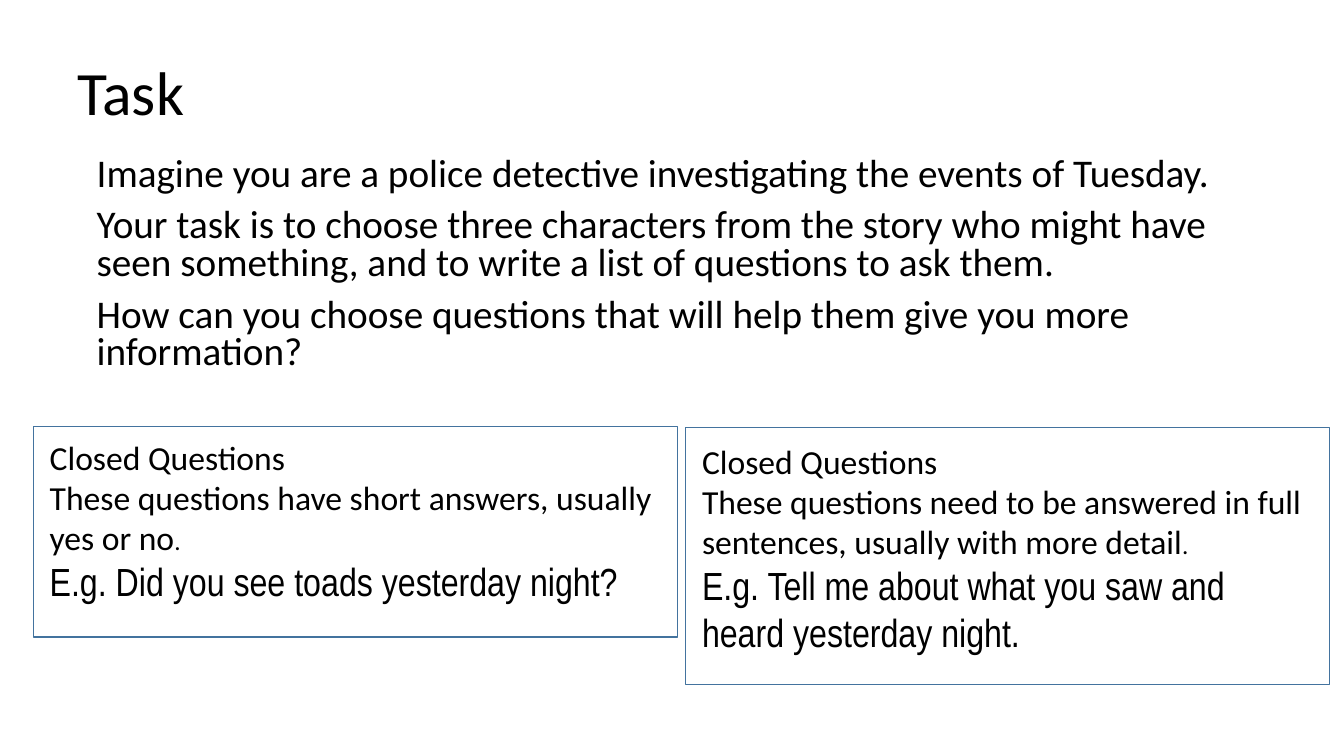
from dataclasses import dataclass

from pptx import Presentation
from pptx.dml.color import RGBColor
from pptx.enum.shapes import MSO_SHAPE as Preset
from pptx.enum.text import MSO_ANCHOR as Anchor, MSO_AUTO_SIZE as AutoSize, PP_ALIGN as Align
from pptx.util import Pt


@dataclass(frozen=True)
class Theme:
    """Colours, fonts and type sizes of the slide."""
    text: RGBColor = RGBColor(0, 0, 0)
    outline: RGBColor = RGBColor(0x43, 0x73, 0x9E)
    font: str = "Calibri"
    example_font: str = "Arial Narrow"
    title: int = 44
    body: int = 28
    card: int = 24
    full_stop: int = 18


THEME = Theme()

INSTRUCTIONS = [
    "Imagine you are a police detective investigating the events of Tuesday.",
    "Your task is to choose three characters from the story who might have "
    "seen something, and to write a list of questions to ask them.",
    "How can you choose questions that will help them give you more information?",
]

CARDS = [
    ((23.8, 304.6, 460, 150.5), 3.6, "Closed Questions",
     "These questions have short answers, usually yes or no",
     "E.g. Did you see toads yesterday night?"),
    ((489.8, 305.3, 460, 183.6), 5.8, "Closed Questions",
     "These questions need to be answered in full sentences, usually with more detail",
     "E.g. Tell me about what you saw and heard yesterday night."),
]


def style_runs(paragraph, size, font=THEME.font):
    """Give every run of a paragraph its font, size and colour."""
    for run in paragraph.runs:
        run.font.name = font
        run.font.size = Pt(size)
        run.font.color.rgb = THEME.text


def add_text_box(slide, box, text):
    """Add a wrapping text box and return its text frame."""
    text_frame = slide.shapes.add_textbox(*map(Pt, box)).text_frame
    text_frame.word_wrap = True
    text_frame.text = text
    return text_frame


def place_title(slide, box, text):
    """Move the title placeholder into its box and fill it."""
    title = slide.shapes.title
    title.left, title.top, title.width, title.height = map(Pt, box)
    text_frame = title.text_frame
    text_frame.text = text
    text_frame.vertical_anchor = Anchor.MIDDLE
    text_frame.auto_size = AutoSize.NONE
    paragraph = text_frame.paragraphs[0]
    paragraph.alignment = Align.LEFT
    paragraph.line_spacing = 0.9
    style_runs(paragraph, THEME.title)


def add_instructions(slide, box, lines):
    """Add the task instructions as spaced paragraphs."""
    text_frame = add_text_box(slide, box, "\n".join(lines))
    for paragraph in text_frame.paragraphs:
        paragraph.line_spacing = 0.8
        paragraph.space_before = Pt(10)
        style_runs(paragraph, THEME.body)


def add_question_card(slide, box, text_inset, heading, description, example):
    """Add an outlined card with a heading, a description and an example."""
    left, top, width, height = box
    frame = slide.shapes.add_shape(Preset.RECTANGLE, *map(Pt, box))
    frame.shadow.inherit = False
    frame.fill.background()
    frame.line.color.rgb = THEME.outline
    frame.line.width = Pt(1)

    text_box = (left + 4.6, top + text_inset, width - 14.4, height - 22)
    text_frame = add_text_box(slide, text_box, "\n".join((heading, description, example)))
    text_frame.auto_size = AutoSize.SHAPE_TO_FIT_TEXT
    heading_line, description_line, example_line = text_frame.paragraphs
    full_stop = description_line.add_run()
    full_stop.text = "."
    style_runs(heading_line, THEME.card)
    style_runs(description_line, THEME.card)
    style_runs(example_line, THEME.body, THEME.example_font)
    full_stop.font.size = Pt(THEME.full_stop)


def build_task_slide(presentation):
    """Build the task slide on the title-only layout."""
    slide = presentation.slides.add_slide(presentation.slide_layouts[5])
    place_title(slide, (48, 16, 828, 104), "Task")
    add_instructions(slide, (62, 108.7, 828, 168.5), INSTRUCTIONS)
    for card in CARDS:
        add_question_card(slide, *card)


def main():
    """Create and save the presentation."""
    presentation = Presentation()
    presentation.slide_width, presentation.slide_height = Pt(960), Pt(540)
    build_task_slide(presentation)
    presentation.save("out.pptx")


if __name__ == "__main__":
    main()
